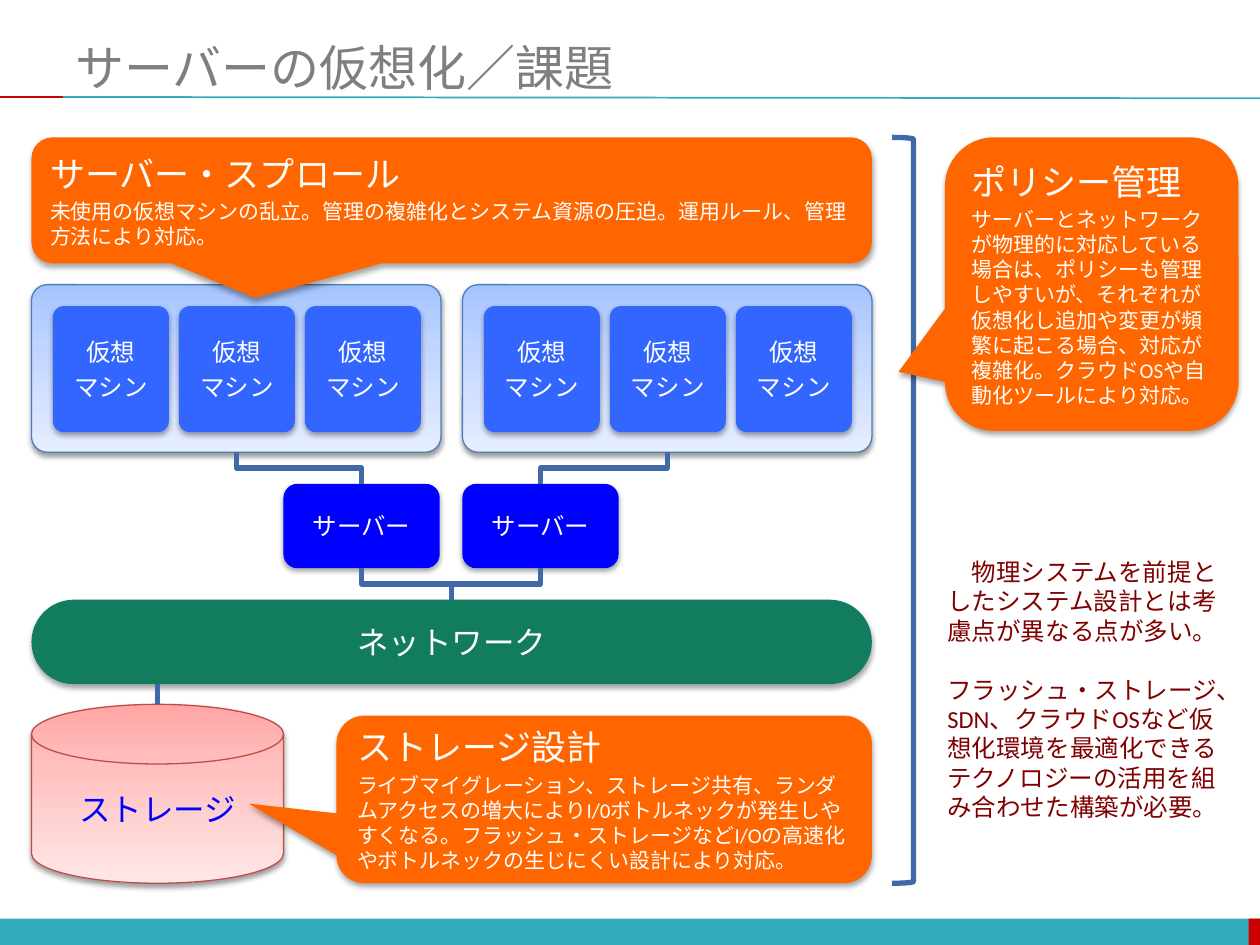
from lxml.etree import SubElement
from pptx import Presentation
from pptx.dml.color import RGBColor
from pptx.enum.shapes import MSO_CONNECTOR as Connector, MSO_SHAPE as Shape
from pptx.enum.text import MSO_ANCHOR as Anchor, MSO_AUTO_SIZE as AutoSize, PP_ALIGN as Align
from pptx.oxml.ns import qn
from pptx.util import Inches, Pt

WHITE = RGBColor(0xFF, 0xFF, 0xFF)
BLACK = RGBColor(0x00, 0x00, 0x00)
GRAY = RGBColor(0x7F, 0x7F, 0x7F)
TEAL = RGBColor(0x33, 0xAC, 0xBD)
RED = RGBColor(0xCC, 0x00, 0x00)
BLUE = RGBColor(0x00, 0x00, 0xFF)
MACHINE_BLUE = RGBColor(0x33, 0x66, 0xFF)
LINK_BLUE = RGBColor(0x41, 0x68, 0xA7)
HOST_EDGE = RGBColor(0x4B, 0x7E, 0xBC)
DISK_EDGE = RGBColor(0xBF, 0x4C, 0x48)
GREEN = RGBColor(0x12, 0x7C, 0x5E)
ORANGE = RGBColor(0xFF, 0x66, 0x00)
MAROON = RGBColor(0x80, 0x00, 0x00)
HOST_STOPS = [(0, RGBColor(0xA4, 0xC4, 0xFF)), (35, RGBColor(0xBF, 0xD4, 0xFF)),
              (100, RGBColor(0xE6, 0xEE, 0xFF))]
DISK_STOPS = [(0, RGBColor(0xFF, 0xA6, 0xA5)), (35, RGBColor(0xFF, 0xC0, 0xBF)),
              (100, RGBColor(0xFF, 0xE7, 0xE7))]

LEFT = 0.25
DIAGRAM_WIDTH = 6.67
HOST_WIDTH = 3.25


def write_text(para, text, size=14, font="Arial", color=WHITE, align=Align.LEFT, before=0):
    para.alignment = align
    para.space_before = Pt(before)
    span = para.add_run()
    span.text = text
    span.font.size = Pt(size)
    span.font.name = font
    span.font.color.rgb = color


def write_lines(frame, lines, gap=0.2, **style):
    frame.word_wrap = True
    for index, (text, size) in enumerate(lines):
        para = frame.add_paragraph() if index else frame.paragraphs[0]
        write_text(para, text, size=size, before=round(size * gap, 1) if index else 0, **style)


def fill_gradient(shape, stops):
    shape.fill.gradient()
    shape.fill.gradient_angle = 270
    stop_list = shape._element.spPr.find(qn("a:gradFill")).find(qn("a:gsLst"))
    for old in list(stop_list):
        stop_list.remove(old)
    for position, color in stops:
        stop = SubElement(stop_list, qn("a:gs"), pos=str(position * 1000))
        SubElement(stop, qn("a:srgbClr"), val=str(color))


def add_shadow(shape, opacity, distance):
    effects = shape._element.spPr.find(qn("a:effectLst"))
    shadow = SubElement(effects, qn("a:outerShdw"), blurRad=str(Pt(3.1)),
                        dist=str(Pt(distance)), dir="5400000", rotWithShape="0")
    color = SubElement(shadow, qn("a:srgbClr"), val=str(BLACK))
    SubElement(color, qn("a:alpha"), val=str(opacity * 1000))


def add_block(page, kind, left, top, width, height, fill, edge=None, edge_width=0.75,
              adjust=(), shadow=True):
    block = page.shapes.add_shape(kind, Inches(left), Inches(top), Inches(width), Inches(height))
    for index, value in enumerate(adjust):
        block.adjustments[index] = value
    if isinstance(fill, RGBColor):
        block.fill.solid()
        block.fill.fore_color.rgb = fill
    else:
        fill_gradient(block, fill)
    if edge is None:
        block.line.fill.background()
    else:
        block.line.color.rgb = edge
        block.line.width = Pt(edge_width)
    block.shadow.inherit = False
    if shadow:
        add_shadow(block, *((38, 1.6) if edge else (35, 1.8)))
    block.text_frame.vertical_anchor = Anchor.MIDDLE
    return block


def add_label(block, *texts, size=14, color=WHITE):
    write_lines(block.text_frame, [(text, size) for text in texts],
                color=color, align=Align.CENTER)


def add_callout(page, left, top, width, height, tip, heading, body):
    callout = add_block(page, Shape.ROUNDED_RECTANGULAR_CALLOUT, left, top, width, height,
                        ORANGE, adjust=(*tip, 0.167))
    write_lines(callout.text_frame, [(heading, 20), (body, 12)], font="Calibri")


def style_line(line, color, width):
    line.line.color.rgb = color
    line.line.width = Pt(width)
    SubElement(line._element.spPr, qn("a:effectLst"))


def add_line(page, start, end, color, width):
    line = page.shapes.add_connector(Connector.STRAIGHT, *map(Inches, start + end))
    style_line(line, color, width)


def add_elbow(page, upper, lower):
    x1, y1 = upper.left + upper.width // 2, upper.top + upper.height
    x2, y2 = lower.left + lower.width // 2, lower.top
    elbow = page.shapes.add_connector(Connector.ELBOW, x1, y1, x2, y2)
    elbow.begin_connect(upper, 2)
    elbow.end_connect(lower, 0)
    drop, reach = y2 - y1, abs(x2 - x1)
    elbow.left, elbow.top = (x1 + x2 - drop) // 2, (y1 + y2 - reach) // 2
    elbow.width, elbow.height = drop, reach
    frame = elbow._element.spPr.find(qn("a:xfrm"))
    rightward = x2 > x1
    frame.set("flipH", "1" if rightward else "0")
    frame.set("rot", str((270 if rightward else 90) * 60000))
    style_line(elbow, LINK_BLUE, 3)


def add_frame(page):
    for left, width, color in [(0, 10, TEAL), (9.91, 0.09, RED)]:
        add_block(page, Shape.RECTANGLE, left, 7.29, width, 0.21, color, shadow=False)
    add_line(page, (0.5, 0.77), (10, 0.78), TEAL, 1)
    add_line(page, (0, 0.77), (0.5, 0.77), RED, 1)
    title = page.shapes.title
    title.left, title.top, title.width, title.height = map(Inches, (0.5, 0.3, 9.5, 0.46))
    frame = title.text_frame
    frame.auto_size = AutoSize.NONE
    frame.vertical_anchor = Anchor.MIDDLE
    write_text(frame.paragraphs[0], "サーバーの仮想化／課題", size=28, font="Calibri", color=GRAY)


def add_host(page, left):
    host = add_block(page, Shape.ROUNDED_RECTANGLE, left, 2.26, HOST_WIDTH, 1.33, HOST_STOPS,
                     edge=HOST_EDGE, adjust=(0.094,))
    for column in range(3):
        machine = add_block(page, Shape.ROUNDED_RECTANGLE, left + 0.17 + column, 2.43, 0.92, 1,
                            MACHINE_BLUE, adjust=(0.094,))
        add_label(machine, "仮想", "マシン")
    return host


def add_server(page, left):
    server = add_block(page, Shape.ROUNDED_RECTANGLE, left, 3.84, 1.24, 0.67, BLUE)
    add_label(server, "サーバー")
    return server


def add_diagram(page):
    right_host = LEFT + DIAGRAM_WIDTH - HOST_WIDTH
    hosts = [add_host(page, left) for left in (LEFT, right_host)]
    servers = [add_server(page, left) for left in (2.25, right_host)]
    network = add_block(page, Shape.ROUNDED_RECTANGLE, LEFT, 4.76, DIAGRAM_WIDTH, 0.67, GREEN,
                        adjust=(0.5,))
    add_label(network, "ネットワーク", size=18)
    storage = add_block(page, Shape.FLOWCHART_MAGNETIC_DISK, LEFT, 5.59, 2, 1.42, DISK_STOPS,
                        edge=DISK_EDGE)
    add_label(storage, "ストレージ", size=18, color=BLUE)
    for host, server in zip(hosts, servers):
        add_elbow(page, host, server)
        add_elbow(page, server, network)
    add_line(page, (1.25, 5.43), (1.25, 5.59), LINK_BLUE, 3)


def add_issues(page):
    add_callout(page, LEFT, 1.09, DIAGRAM_WIDTH, 1, (-0.234, 0.775), "サーバー・スプロール",
                "未使用の仮想マシンの乱立。管理の複雑化とシステム資源の圧迫。運用ルール、管理方法により対応。")
    add_callout(page, 2.67, 5.68, 4.25, 1.33, (-0.664, 0.025), "ストレージ設計",
                "ライブマイグレーション、ストレージ共有、ランダムアクセスの増大によりI/0ボトルネックが"
                "発生しやすくなる。フラッシュ・ストレージなどI/Oの高速化やボトルネックの生じにくい"
                "設計により対応。")
    add_block(page, Shape.RIGHT_BRACKET, 7.08, 1.09, 0.17, 5.92, WHITE, edge=LINK_BLUE,
              edge_width=3, shadow=False)
    add_callout(page, 7.5, 1.09, 2.33, 2.33, (-0.658, 0.299), "ポリシー管理",
                "サーバーとネットワークが物理的に対応している場合は、ポリシーも管理しやすいが、"
                "それぞれが仮想化し追加や変更が頻繁に起こる場合、対応が複雑化。クラウドOSや"
                "自動化ツールにより対応。")


def add_conclusion(page):
    box = page.shapes.add_textbox(Inches(7.42), Inches(4.37), Inches(2.42), Inches(2.22))
    write_lines(box.text_frame, [
        ("　物理システムを前提としたシステム設計とは考慮点が異なる点が多い。", 14),
        ("フラッシュ・ストレージ、SDN、クラウドOSなど仮想化環境を最適化できる"
         "テクノロジーの活用を組み合わせた構築が必要。", 14),
    ], gap=1.2, font="Calibri", color=MAROON)


def main():
    deck = Presentation()
    deck.slide_width, deck.slide_height = Inches(10), Inches(7.5)
    page = deck.slides.add_slide(deck.slide_layouts[5])
    add_frame(page)
    add_diagram(page)
    add_issues(page)
    add_conclusion(page)
    deck.save("out.pptx")


if __name__ == "__main__":
    main()
